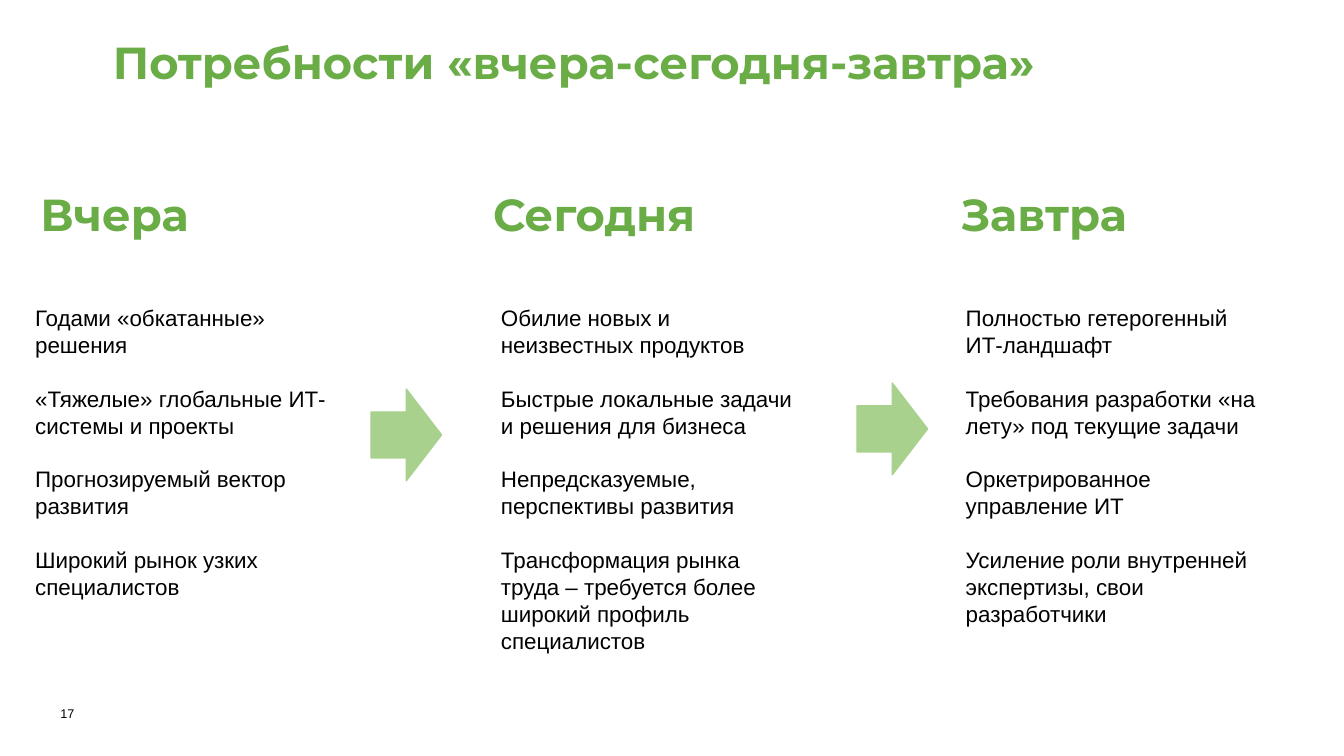
from dataclasses import dataclass

from pptx import Presentation
from pptx.dml.color import RGBColor
from pptx.enum.shapes import MSO_SHAPE as Shape
from pptx.enum.text import MSO_ANCHOR as Anchor, MSO_AUTO_SIZE as AutoSize, PP_ALIGN as Align
from pptx.shapes.base import BaseShape
from pptx.slide import Slide
from pptx.text.text import TextFrame
from pptx.util import Inches, Pt

COLORS = {"heading": "6AAC46", "arrow": "A9D18E", "body": "000000"}
BODY_LINE = Pt(19.2)


@dataclass(frozen=True)
class Column:
    """One period with its heading and needs."""

    heading: str
    heading_left: float
    body_left: float
    height: float
    needs: tuple[str, ...]


@dataclass(frozen=True)
class Arrow:
    """Position of an arrow between two periods."""

    left: float
    top: float


COLUMNS = (
    Column("Вчера", 0.4, 0.25, 3.33, (
        "Годами «обкатанные» решения",
        "«Тяжелые» глобальные ИТ-системы и проекты",
        "Прогнозируемый вектор развития",
        "Широкий рынок узких специалистов",
    )),
    Column("Сегодня", 4.89, 4.87, 3.87, (
        "Обилие новых и неизвестных продуктов",
        "Быстрые локальные задачи и решения для бизнеса",
        "Непредсказуемые, перспективы развития",
        "Трансформация рынка труда – требуется более широкий профиль специалистов",
    )),
    Column("Завтра", 9.53, 9.48, 3.6, (
        "Полностью гетерогенный ИТ-ландшафт",
        "Требования разработки «на лету» под текущие задачи",
        "Оркетрированное управление ИТ",
        "Усиление роли внутренней экспертизы, свои разработчики",
    )),
)
ARROWS = (Arrow(3.68, 3.86), Arrow(8.5, 3.8))


def place(shape: BaseShape, left: float, top: float, width: float, height: float) -> None:
    """Set the bounds of a shape in inches."""
    shape.left, shape.top = Inches(left), Inches(top)
    shape.width, shape.height = Inches(width), Inches(height)


def clear_margins(frame: TextFrame) -> None:
    """Remove the insets of a text frame."""
    frame.margin_left = frame.margin_right = Inches(0)
    frame.margin_top = frame.margin_bottom = Inches(0)


def format_runs(frame: TextFrame, font: str, size: float, color: str, bold: bool = False) -> None:
    """Apply one font to all runs of a text frame."""
    for paragraph in frame.paragraphs:
        for run in paragraph.runs:
            run.font.name = font
            run.font.size = Pt(size)
            run.font.bold = bold
            run.font.color.rgb = RGBColor.from_string(COLORS[color])


def write_heading(shape: BaseShape, text: str) -> None:
    """Write a green heading into a shape."""
    frame = shape.text_frame
    frame.text = text
    frame.word_wrap = True
    frame.auto_size = AutoSize.NONE
    frame.vertical_anchor = Anchor.TOP
    clear_margins(frame)
    frame.paragraphs[0].alignment = Align.LEFT
    frame.paragraphs[0].line_spacing = 0.85
    format_runs(frame, "Montserrat", 32, "heading", bold=True)


def add_text_box(slide: Slide, left: float, top: float, width: float, height: float) -> BaseShape:
    """Add an empty text box measured in inches."""
    return slide.shapes.add_textbox(Inches(left), Inches(top), Inches(width), Inches(height))


def add_column(slide: Slide, column: Column) -> None:
    """Draw the heading and needs of one period."""
    write_heading(add_text_box(slide, column.heading_left, 1.93, 3.2, 0.32), column.heading)
    frame = add_text_box(slide, column.body_left, 2.97, 3.15, column.height).text_frame
    frame.word_wrap = True
    frame.text = "\n".join(column.needs)
    for paragraph in frame.paragraphs:
        paragraph.line_spacing = BODY_LINE
        paragraph.space_after = BODY_LINE
    format_runs(frame, "Arial", 16, "body")


def add_arrow(slide: Slide, arrow: Arrow) -> None:
    """Draw an arrow leading to the next period."""
    shape = slide.shapes.add_shape(
        Shape.RIGHT_ARROW, Inches(arrow.left), Inches(arrow.top), Inches(0.7), Inches(0.91))
    color = RGBColor.from_string(COLORS["arrow"])
    shape.shadow.inherit = False
    shape.fill.solid()
    shape.fill.fore_color.rgb = color
    shape.line.color.rgb = color
    shape.line.width = Pt(1)


def add_page_number(slide: Slide, number: int) -> None:
    """Write the page number at the lower left."""
    frame = add_text_box(slide, 0.6, 6.94, 0.32, 0.28).text_frame
    frame.text = str(number)
    frame.word_wrap = False
    frame.vertical_anchor = Anchor.MIDDLE
    clear_margins(frame)
    format_runs(frame, "Arial", 9, "body")


def main() -> None:
    """Build and save the presentation."""
    presentation = Presentation()
    presentation.slide_width, presentation.slide_height = Inches(13.33), Inches(7.5)
    slide = presentation.slides.add_slide(presentation.slide_layouts.get_by_name("Title Only"))
    title = slide.shapes.title
    place(title, 1.12, 0.43, 10.8, 0.53)
    write_heading(title, "Потребности «вчера-сегодня-завтра»")
    for column in COLUMNS:
        add_column(slide, column)
    for arrow in ARROWS:
        add_arrow(slide, arrow)
    add_page_number(slide, 17)
    presentation.save("out.pptx")


if __name__ == "__main__":
    main()
